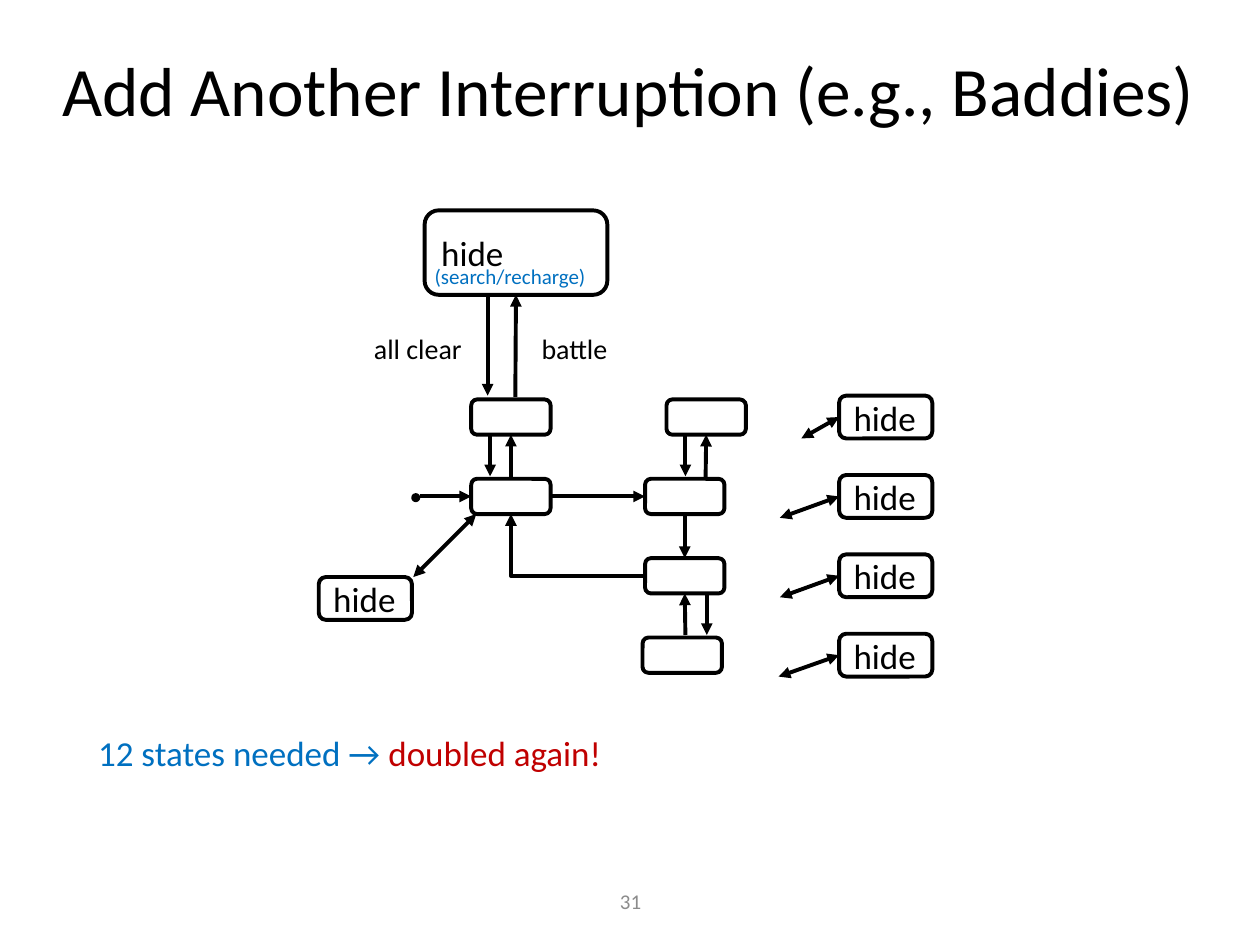
from dataclasses import dataclass

from lxml import etree
from pptx import Presentation
from pptx.dml.color import RGBColor
from pptx.enum.shapes import MSO_CONNECTOR, MSO_SHAPE
from pptx.enum.text import MSO_ANCHOR, PP_ALIGN
from pptx.oxml.ns import qn
from pptx.util import Inches, Pt


@dataclass(frozen=True)
class Theme:
    font: str = "Calibri"
    black: str = "000000"
    white: str = "FFFFFF"
    blue: str = "0070C0"
    red: str = "C00000"
    gray: str = "8C8C8C"
    title: float = 39.6
    body: float = 20
    label: float = 16
    small: float = 12
    line: float = 2.25


T = Theme()
STATE_W, STATE_H = 0.63, 0.28
HIDE_W, HIDE_H = 0.74, 0.34
ROW_TOP, ROW_STEP = 3.17, 0.63
TOP, LEFT, BOTTOM, RIGHT = range(4)


def write(tf, *parts, size=T.body, color=T.black, align=PP_ALIGN.LEFT, wrap=False):
    """Fill a text frame; each part is a string or a (string, color) pair."""
    tf.word_wrap = wrap
    tf.vertical_anchor = MSO_ANCHOR.MIDDLE
    p = tf.paragraphs[0]
    p.alignment = align
    for part in parts:
        text, part_color = (part, color) if isinstance(part, str) else part
        r = p.add_run()
        r.text = text
        r.font.name = T.font
        r.font.size = Pt(size)
        r.font.color.rgb = RGBColor.from_string(part_color)


def add_text(s, x, y, w, h, *parts, **fmt):
    box = s.shapes.add_textbox(Inches(x), Inches(y), Inches(w), Inches(h))
    write(box.text_frame, *parts, **fmt)


def add_state(s, x, y, w=STATE_W, h=STATE_H, text=None,
              kind=MSO_SHAPE.ROUNDED_RECTANGLE, fill=T.white):
    sp = s.shapes.add_shape(kind, Inches(x), Inches(y), Inches(w), Inches(h))
    sp.shadow.inherit = False
    sp.fill.solid()
    sp.fill.fore_color.rgb = RGBColor.from_string(fill)
    sp.line.color.rgb = RGBColor.from_string(T.black)
    sp.line.width = Pt(T.line)
    if text:
        write(sp.text_frame, text)
    return sp


def add_arrow(s, start, end, both=False, bent=False):
    """Arrow between ends that are (x, y) points or (shape, site) pairs."""
    kind = MSO_CONNECTOR.ELBOW if bent else MSO_CONNECTOR.STRAIGHT
    fixed = [isinstance(e[0], (int, float)) for e in (start, end)]
    (x1, y1), (x2, y2) = [e if f else (0, 0) for e, f in zip((start, end), fixed)]
    c = s.shapes.add_connector(kind, Inches(x1), Inches(y1), Inches(x2), Inches(y2))
    if not fixed[0]:
        c.begin_connect(*start)
    if not fixed[1]:
        c.end_connect(*end)
    c.line.color.rgb = RGBColor.from_string(T.black)
    c.line.width = Pt(T.line)
    ln = c.line._get_or_add_ln()
    for tag in ("a:headEnd", "a:tailEnd") if both else ("a:tailEnd",):
        etree.SubElement(ln, qn(tag), type="triangle")
    sp_pr = c._element.spPr
    etree.SubElement(sp_pr, qn("a:effectLst"))
    if bent:
        sp_pr.find(qn("a:prstGeom")).set("prst", "bentConnector2")


def add_title(s, text):
    title = s.shapes.title
    title.left, title.top = Inches(0.23), Inches(0.08)
    title.width, title.height = Inches(9.52), Inches(1.25)
    write(title.text_frame, text, size=T.title, align=PP_ALIGN.CENTER, wrap=True)


def add_machine(s):
    """Base state machine; returns its upper left and idle states."""
    rows = [ROW_TOP + i * ROW_STEP for i in range(4)]
    left_top, idle = [add_state(s, 3.74, y) for y in rows[:2]]
    right_top, right_mid, right_low, right_end = [
        add_state(s, x, y) for x, y in zip((5.29, 5.12, 5.12, 5.10), rows)]

    # Main loop, entered from the start dot
    add_state(s, 3.28, 3.93, 0.04, 0.04, kind=MSO_SHAPE.OVAL, fill=T.black)
    add_arrow(s, (3.33, 3.94), (idle, LEFT))
    add_arrow(s, (idle, RIGHT), (right_mid, LEFT))
    add_arrow(s, (right_mid, BOTTOM), (right_low, TOP))
    add_arrow(s, (right_low, LEFT), (idle, BOTTOM), bent=True)

    # Interruptions: one arrow there, one back
    add_arrow(s, (idle, TOP), (left_top, BOTTOM))
    add_arrow(s, (3.89, 3.45), (3.89, 3.78))
    add_arrow(s, (5.6, 3.79), (right_top, BOTTOM))
    add_arrow(s, (5.44, 3.45), (5.44, 3.78))
    add_arrow(s, (5.44, 5.04), (right_low, BOTTOM))
    add_arrow(s, (5.61, 4.71), (5.61, 5.04))
    return left_top


def add_battle(s, search):
    """Large hide state with its transitions."""
    hide = add_state(s, 3.37, 1.67, 1.45, 0.67, "hide")
    add_arrow(s, (4.09, 3.15), (hide, BOTTOM))
    add_arrow(s, (3.87, 2.33), (3.87, 3.14))
    add_text(s, 4.2, 2.58, 0.74, 0.37, "battle", size=T.label)
    add_text(s, 2.87, 2.58, 0.97, 0.37, "all clear", size=T.label)
    add_text(s, 3.35, 2.04, 1.41, 0.3, "(search/recharge)", size=T.small, color=T.blue)


def add_hides(s):
    """Hide states for the remaining states."""
    for i, tip_x in enumerate((6.36, 6.19, 6.19, 6.18)):
        y = 3.14 + i * ROW_STEP
        hide = add_state(s, 6.66, y, HIDE_W, HIDE_H, "hide")
        add_arrow(s, (tip_x, y + HIDE_H), (hide, LEFT), both=True)
    add_state(s, 2.53, 4.58, HIDE_W, HIDE_H, "hide")
    add_arrow(s, (3.28, 4.58), (3.78, 4.08), both=True)


def main():
    prs = Presentation()
    prs.slide_width, prs.slide_height = Inches(10), Inches(7.5)
    s = prs.slides.add_slide(prs.slide_layouts[5])

    add_title(s, "Add Another Interruption (e.g., Baddies)")
    add_battle(s, add_machine(s))
    add_hides(s)

    # Conclusion and page number
    add_text(s, 0.68, 5.75, 4.25, 0.44,
             ("12 states needed → ", T.blue), ("doubled again!", T.red))
    add_text(s, 3.42, 6.95, 3.17, 0.4, "31", size=T.small, color=T.gray,
             align=PP_ALIGN.CENTER, wrap=True)
    prs.save("out.pptx")


if __name__ == "__main__":
    main()
